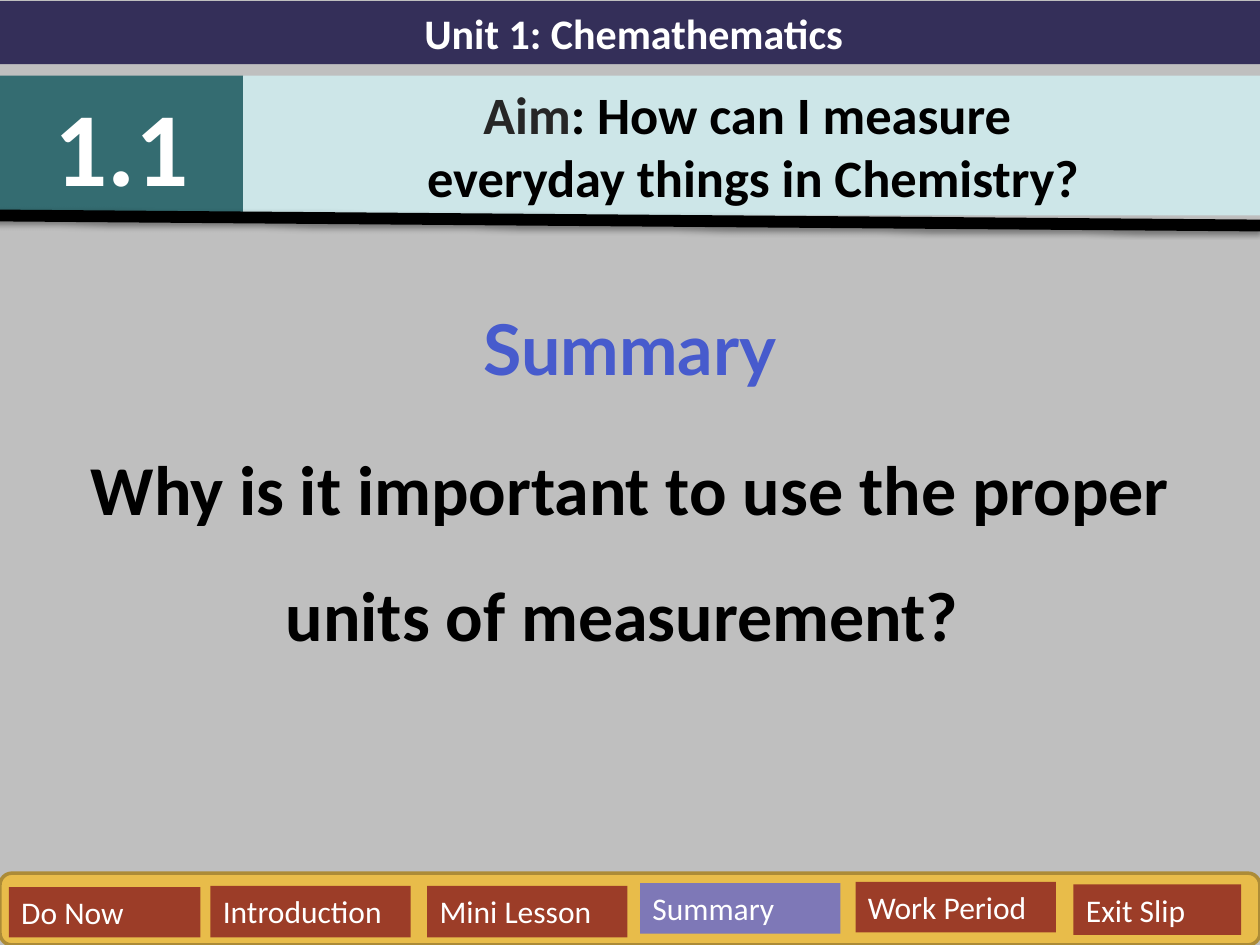
from lxml.etree import SubElement
from pptx import Presentation
from pptx.dml.color import RGBColor
from pptx.enum.shapes import MSO_CONNECTOR, MSO_SHAPE
from pptx.enum.text import MSO_ANCHOR, PP_ALIGN
from pptx.oxml.ns import qn
from pptx.util import Inches, Pt

WIDE, HIGH = 10, 7.5
INK = {
    "back": "BFBFBF", "unit": "342F59", "badge": "346C71", "aim": "CDE6E8",
    "bar": "E8BC4A", "edge": "AC8B37", "tab": "9C3D28", "live": "7E78B7",
    "head": "475BCD", "gray": "262626", "black": "000000", "white": "FFFFFF",
}
# label, left, top, width, height
TABS = [
    ("Do Now", 0.07, 7.04, 1.52, 0.4),
    ("Introduction", 1.67, 7.03, 1.59, 0.41),
    ("Mini Lesson", 3.39, 7.03, 1.59, 0.41),
    ("Summary", 5.08, 7.01, 1.59, 0.4),
    ("Work Period", 6.79, 7, 1.59, 0.4),
    ("Exit Slip", 8.52, 7.02, 1.33, 0.4),
]
LIVE = "Summary"


def tint(name):
    return RGBColor.from_string(INK[name])


def style(run, size, color, bold=True, face="Calibri"):
    run.font.name, run.font.size, run.font.bold = face, Pt(size), bold
    run.font.color.rgb = tint(color)


def add_box(slide, area, fill, kind=MSO_SHAPE.RECTANGLE):
    box = slide.shapes.add_shape(kind, *map(Inches, area))
    box.shadow.inherit = False
    box.fill.solid()
    box.fill.fore_color.rgb = tint(fill)
    box.line.fill.background()
    return box


def write(shape, lines, size, color="white", bold=True, align=PP_ALIGN.CENTER):
    frame = shape.text_frame
    frame.word_wrap = True
    frame.vertical_anchor = MSO_ANCHOR.TOP
    frame.text = "\n".join(lines)
    for para in frame.paragraphs:
        para.alignment = align
        for run in para.runs:
            style(run, size, color, bold)
    return frame


def add_rule(slide, start, end):
    """Draw the thick slanted line with its soft shadow below."""
    rule = slide.shapes.add_connector(
        MSO_CONNECTOR.STRAIGHT, *map(Inches, start + end))
    rule.line.color.rgb = tint("black")
    rule.line.width = Pt(6.75)
    effects = SubElement(rule._element.spPr, qn("a:effectLst"))
    shade = SubElement(effects, qn("a:outerShdw"), blurRad=str(Pt(3.1)),
                       dist=str(Pt(1.6)), dir="5400000", rotWithShape="0")
    color = SubElement(shade, qn("a:srgbClr"), val=INK["black"])
    SubElement(color, qn("a:alpha"), val="38000")


def add_body(slide):
    body = slide.shapes.add_textbox(*map(Inches, (0, 2.04, WIDE, 4.98)))
    lines = ["Summary",
             "Why is it important to use the proper units of measurement? "]
    frame = write(body, lines, 40, "black")
    for para in frame.paragraphs:
        para.line_spacing = 1.5
        para.space_before = Pt(8)
    style(frame.paragraphs[0].runs[0], 40, "head", face="Lato")


def add_header(slide):
    write(add_box(slide, (0, 0.01, 10.06, 0.5), "unit"),
          ["Unit 1: Chemathematics"], 24)
    write(add_box(slide, (0, 0.6, 1.93, 1.11), "badge"), ["1.1"], 60)
    aim = write(add_box(slide, (1.93, 0.6, 8.1, 1.11), "aim"),
                ["Aim", "everyday things in Chemistry?"], 30, "black")
    first = aim.paragraphs[0]
    style(first.runs[0], 30, "gray")
    rest = first.add_run()
    rest.text = ": How can I measure "
    style(rest, 30, "black")
    add_rule(slide, (-0.05, 1.71), (WIDE, 1.79))


def add_tabs(slide):
    bar = add_box(slide, (0, 6.93, WIDE, 0.57), "bar",
                  MSO_SHAPE.ROUNDED_RECTANGLE)
    bar.line.color.rgb = tint("edge")
    bar.line.width = Pt(2)
    for label, *area in TABS:
        tab = add_box(slide, area, "live" if label == LIVE else "tab")
        write(tab, [label], 18, bold=False, align=PP_ALIGN.LEFT)


def main():
    deck = Presentation()
    deck.slide_width, deck.slide_height = Inches(WIDE), Inches(HIGH)
    slide = deck.slides.add_slide(deck.slide_layouts[6])
    slide.background.fill.solid()
    slide.background.fill.fore_color.rgb = tint("back")
    add_body(slide)
    add_header(slide)
    add_tabs(slide)
    deck.save("out.pptx")


if __name__ == "__main__":
    main()
